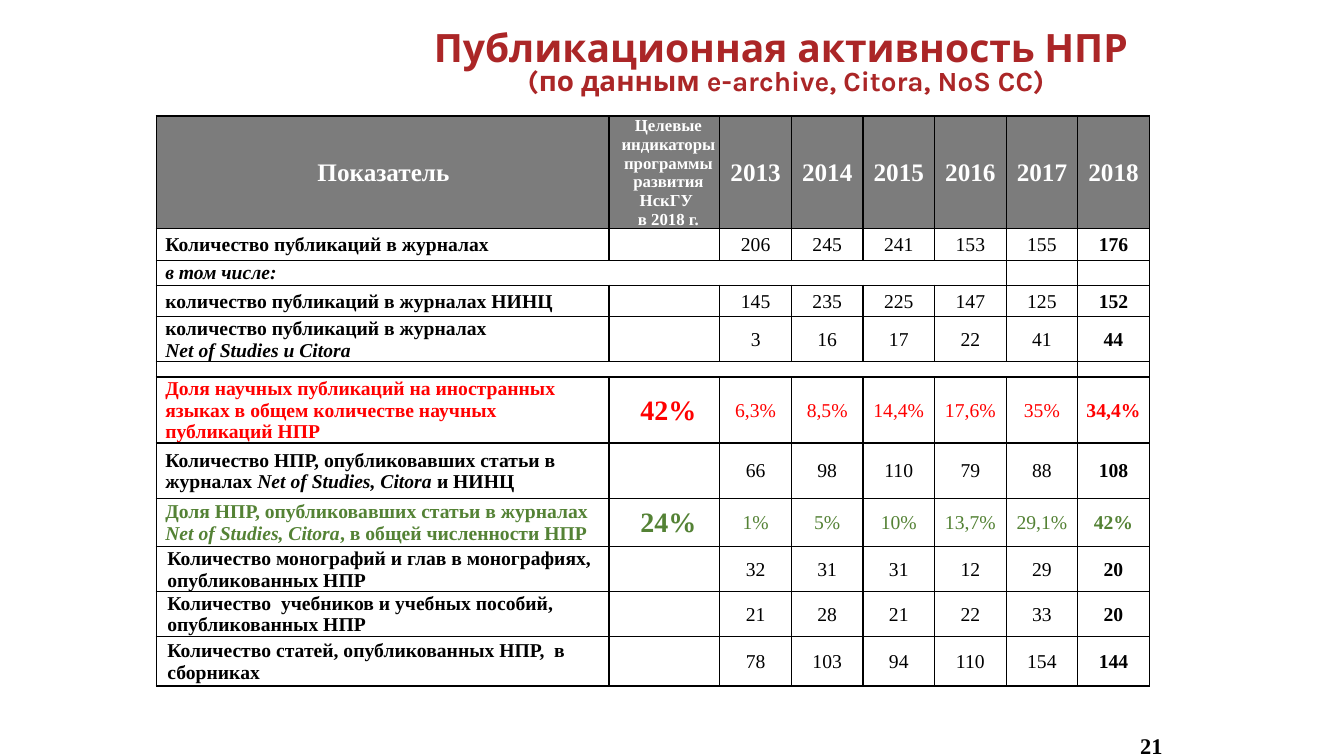
from pptx import Presentation
from pptx.dml.color import RGBColor
from pptx.enum.text import MSO_ANCHOR, PP_ALIGN
from pptx.oxml import parse_xml
from pptx.oxml.ns import nsdecls
from pptx.util import Inches, Pt

LEFT, CENTER = PP_ALIGN.LEFT, PP_ALIGN.CENTER
MIDDLE, BOTTOM = MSO_ANCHOR.MIDDLE, MSO_ANCHOR.BOTTOM
COLORS = {"title": "AB2627", "header": "7C7C7C", "white": "FFFFFF",
          "black": "000000", "red": "FF0000", "green": "548235"}
SERIF, SANS = "Times New Roman", "Karla"

COLUMN_WIDTHS = [4.49, 1.1] + [0.71] * 6
ROW_HEIGHTS = [1.12, 0.31, 0.25, 0.31, 0.45, 0.15, 0.65, 0.55, 0.48, 0.44, 0.45, 0.49]
HEADER = ["Показатель ",
          "Целевые индикаторы программы развития НскГУ \nв 2018 г.",
          "2013", "2014", "2015", "2016", "2017", "2018"]
# label (italics between asterisks), target, yearly values, colour, indent
ROWS = [
    ("Количество публикаций в журналах", "",
     "206 245 241 153 155 176", "black", 0.08),
    ("*в том числе:*", "", "", "black", 0.08),
    ("количество публикаций в журналах НИНЦ", "",
     "145 235 225 147 125 152", "black", 0.08),
    ("количество публикаций в журналах\n*Net of Studies и Citora*", "",
     "3 16 17 22 41 44", "black", 0.08),
    ("", "", "", "black", 0.08),
    ("Доля научных публикаций на иностранных языках в общем количестве научных "
     "публикаций НПР", "42%", "6,3% 8,5% 14,4% 17,6% 35% 34,4%", "red", 0.08),
    ("Количество НПР, опубликовавших статьи в  журналах *Net of Studies, Citora *и НИНЦ",
     "", "66 98 110 79 88 108", "black", 0.08),
    ("Доля НПР, опубликовавших статьи в журналах *Net of Studies, Citora*, "
     "в общей численности НПР", "24%", "1% 5% 10% 13,7% 29,1% 42%", "green", 0.08),
    ("Количество монографий и глав в монографиях, опубликованных НПР", "",
     "32 31 31 12 29 20", "black", 0.1),
    ("Количество  учебников и учебных пособий, опубликованных НПР", "",
     "21 28 21 22 33 20", "black", 0.1),
    ("Количество статей, опубликованных НПР,  в сборниках", "",
     "78 103 94 110 154 144", "black", 0.1),
]
MERGED_COLUMNS = {2: 6, 5: 7}


class SlideBuilder:
    def __init__(self, page):
        self.page = page

    def style(self, font, size, color, bold=True, name=SERIF):
        font.name, font.size, font.bold = name, Pt(size), bold
        font.color.rgb = RGBColor.from_string(COLORS[color])

    def place(self, box, left, top, width, height):
        box.left, box.top = Inches(left), Inches(top)
        box.width, box.height = Inches(width), Inches(height)

    def title(self, heading, subtitle):
        box = self.page.shapes.title
        self.place(box, 4.15, 0.21, 7.29, 0.87)
        box.text_frame.vertical_anchor = MIDDLE
        para = box.text_frame.paragraphs[0]
        para.alignment, para.line_spacing = CENTER, 0.8
        for text, size in ((heading, 27.9), (subtitle, 19.8)):
            span = para.add_run()
            span.text = text
            self.style(span.font, size, "title", name=SANS)
            if text == heading:
                para.add_line_break()

    def page_number(self, text):
        box = self.page.shapes.add_textbox(
            Inches(11.17), Inches(7.06), Inches(0.5), Inches(0.52))
        frame = box.text_frame
        frame.word_wrap, frame.vertical_anchor = True, BOTTOM
        para = frame.paragraphs[0]
        para.text, para.alignment = text, CENTER
        self.style(para.font, 16, "black")

    def borders(self, cell):
        properties = cell._tc.get_or_add_tcPr()
        for index, side in enumerate(("lnL", "lnR", "lnT", "lnB")):
            properties.insert(index, parse_xml(
                f'<a:{side} {nsdecls("a")} w="{Pt(1)}"><a:solidFill>'
                f'<a:srgbClr val="{COLORS["black"]}"/></a:solidFill></a:{side}>'))

    def cell(self, cell, text, size, color, fill="white", bold=True,
             align=CENTER, indent=0):
        """Fill a cell; newlines split paragraphs, asterisks enclose italics."""
        cell.margin_left = cell.margin_right = cell.margin_top = Inches(0.01)
        cell.margin_bottom = 0
        cell.vertical_anchor = MIDDLE
        cell.fill.solid()
        cell.fill.fore_color.rgb = RGBColor.from_string(COLORS[fill])
        self.borders(cell)
        cell.text = text
        for para, line in zip(cell.text_frame.paragraphs, text.split("\n")):
            para.clear()
            para.alignment = align
            para._p.get_or_add_pPr().set("marL", str(Inches(indent)))
            self.style(para.font, size, color, bold)
            for index, part in enumerate(line.split("*")):
                if part:
                    span = para.add_run()
                    span.text = part
                    if index % 2:
                        span.font.italic = True
            if not line:
                para._p.get_or_add_endParaRPr().set("sz", str(size * 100))

    def indicator_table(self):
        frame = self.page.shapes.add_table(
            len(ROW_HEIGHTS), len(COLUMN_WIDTHS), Inches(1.55), Inches(1.15),
            Inches(sum(COLUMN_WIDTHS)), Inches(sum(ROW_HEIGHTS)))
        table = frame.table
        table.first_row = table.horz_banding = False
        for column, width in zip(table.columns, COLUMN_WIDTHS):
            column.width = Inches(width)
        for row, height in zip(table.rows, ROW_HEIGHTS):
            row.height = Inches(height)
        for column, text in enumerate(HEADER):
            self.cell(table.cell(0, column), text, 12 if column == 1 else 18,
                      "white", "header", indent=0.08 if column < 2 else 0)
        for row, (label, target, values, color, indent) in enumerate(ROWS, 1):
            self.cell(table.cell(row, 0), label, 14 if label else 6, color,
                      align=LEFT, indent=indent)
            self.cell(table.cell(row, 1), target, 20 if target else 6, color, indent=0.08)
            years = values.split() or [""] * 6
            for column, value in enumerate(years, 2):
                self.cell(table.cell(row, column), value, 14 if value else 6,
                          color, bold=column == 7)
        for row, count in MERGED_COLUMNS.items():
            table.cell(row, 0).merge(table.cell(row, count - 1))


def main():
    deck = Presentation()
    deck.slide_width, deck.slide_height = Inches(13.33), Inches(7.5)
    builder = SlideBuilder(deck.slides.add_slide(deck.slide_layouts[5]))
    builder.title("Публикационная активность НПР ", "(по данным e-archive, Citora, NoS CC)")
    builder.indicator_table()
    builder.page_number("21")
    deck.save("out.pptx")


if __name__ == "__main__":
    main()
